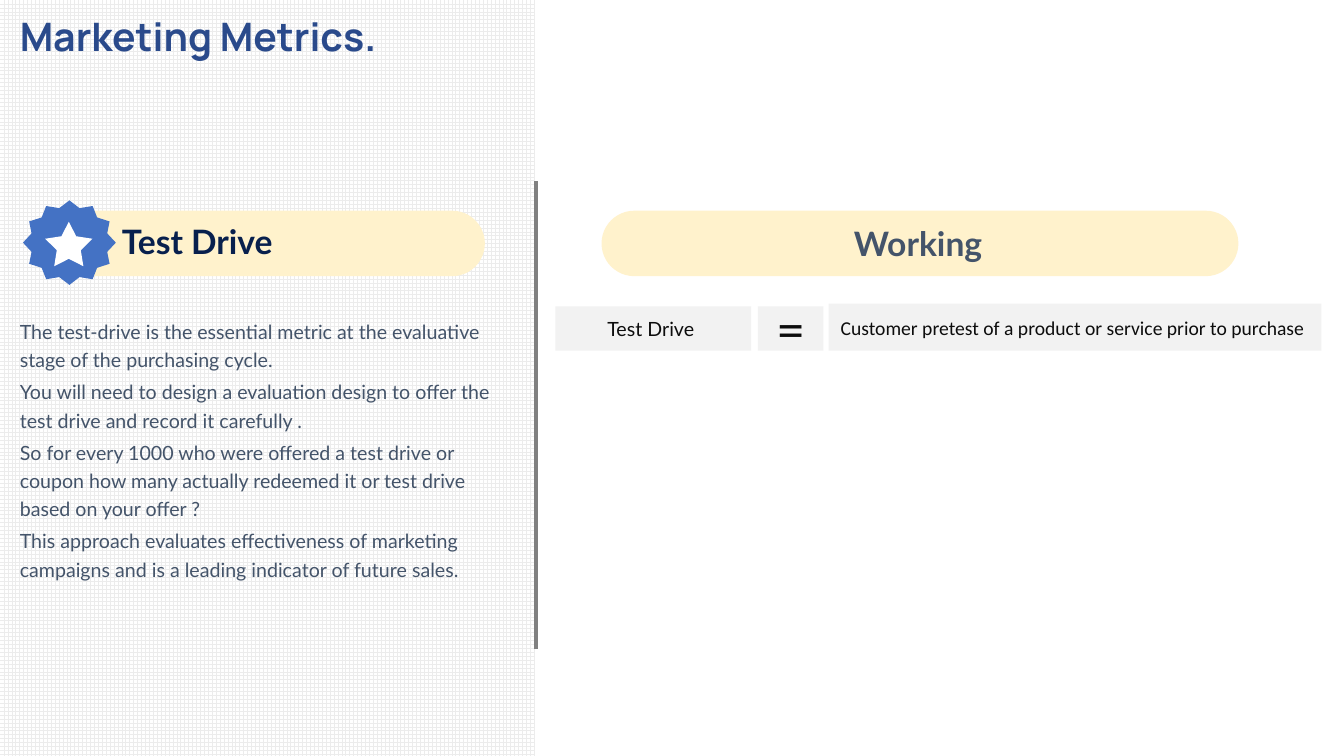
"""Build the Marketing Metrics slide about the test drive."""
import pptx
import pptx.dml.color
import pptx.enum.dml
import pptx.enum.shapes
import pptx.enum.text
import pptx.oxml
import pptx.util

Cm = pptx.util.Cm
Pt = pptx.util.Pt
SHAPES = pptx.enum.shapes.MSO_SHAPE
ALIGN = pptx.enum.text.PP_ALIGN
ANCHOR = pptx.enum.text.MSO_ANCHOR

COLOURS = {
    "white": "FFFFFF",
    "grid": "ECECEC",
    "title": "2A4A8B",
    "slate": "44546A",
    "navy": "08204D",
    "ink": "0D0D0D",
    "cream": "FFF2CC",
    "badge": "4472C4",
    "cell": "F2F2F2",
    "divider": "808080",
}
EXPLANATION = [
    "The test-drive is the essential metric at the evaluative stage of the purchasing cycle.",
    "You will need to design a evaluation design to offer the test drive and record it carefully .",
    "So for every 1000 who were offered a test drive or coupon how many actually redeemed it "
    "or test drive based on your offer ?",
    "This approach evaluates effectiveness of marketing campaigns and is a leading indicator "
    "of future sales.",
]


def colour(name):
    """Return the RGB colour stored under a name."""
    return pptx.dml.color.RGBColor.from_string(COLOURS[name])


def write(frame, *lines, size=14, font="Lato", ink="slate", bold=False, align=ALIGN.LEFT,
          anchor=ANCHOR.TOP, wrap=True, spacing=None, gap=0):
    """Fill a text frame with one formatted paragraph per line."""
    frame.word_wrap = wrap
    frame.vertical_anchor = anchor
    for index, line in enumerate(lines):
        paragraph = frame.paragraphs[0] if index == 0 else frame.add_paragraph()
        paragraph.alignment = align
        if spacing:
            paragraph.line_spacing = spacing
        if index:
            paragraph.space_before = Pt(gap)
        run = paragraph.add_run()
        run.text = line
        run.font.size = Pt(size)
        run.font.name = font
        run.font.bold = bold
        run.font.color.rgb = colour(ink)


def add_label(slide, left, top, width, height, *lines, **text_format):
    """Add a text box with formatted lines."""
    box = slide.shapes.add_textbox(Cm(left), Cm(top), Cm(width), Cm(height))
    write(box.text_frame, *lines, **text_format)


def add_block(slide, kind, left, top, width, height, fill, adjust=None):
    """Add a borderless filled preset shape."""
    block = slide.shapes.add_shape(kind, Cm(left), Cm(top), Cm(width), Cm(height))
    block.shadow.inherit = False
    block.line.fill.background()
    block.fill.solid()
    block.fill.fore_color.rgb = colour(fill)
    if adjust is not None:
        block.adjustments[0] = adjust
    return block


def add_grid_panel(slide, left, top, width, height):
    """Add the panel with a fine grid pattern."""
    panel = add_block(slide, SHAPES.RECTANGLE, left, top, width, height, "white")
    panel.fill.patterned()
    panel.fill.pattern = pptx.enum.dml.MSO_PATTERN.LARGE_GRID
    panel.fill.fore_color.rgb = colour("grid")
    panel.fill.back_color.rgb = colour("white")


def add_divider(slide, left, top, height):
    """Add the vertical rule between the two halves."""
    divider = slide.shapes.add_connector(
        pptx.enum.shapes.MSO_CONNECTOR.STRAIGHT, Cm(left), Cm(top), Cm(left), Cm(top + height))
    divider.line.color.rgb = colour("divider")
    divider.line.width = Pt(3)
    properties = divider._element.spPr
    properties.append(pptx.oxml.parse_xml(
        '<a:effectLst xmlns:a="http://schemas.openxmlformats.org/drawingml/2006/main"/>'))


def add_working_heading(slide, left, top, width, height):
    """Add the pill that heads the right half."""
    add_block(slide, SHAPES.ROUNDED_RECTANGLE, left, top, width, height, "cream", 0.5)
    add_label(slide, left + 0.69, top + 0.18, width - 1.27, 1.27, "Working ",
              size=24, bold=True, align=ALIGN.CENTER, anchor=ANCHOR.BOTTOM)


def add_metric_heading(slide, left, top, width, height):
    """Add the pill with a star badge and the metric name."""
    add_block(slide, SHAPES.ROUNDED_RECTANGLE, left, top, width, height, "cream", 0.5)
    add_block(slide, SHAPES.STAR_12_POINT, left - 0.41, top - 0.26, 2.34, 2.13, "badge", 0.422)
    add_block(slide, SHAPES.STAR_5_POINT, left + 0.15, top + 0.28, 1.19, 1.12, "white", 0.254)
    add_label(slide, left + 1.83, top + 0.13, 4.52, 1.27, "Test Drive",
              size=24, ink="navy", bold=True, anchor=ANCHOR.MIDDLE, wrap=False)


def add_formula(slide, left, top, height):
    """Add the row of cells that defines the metric."""
    cells = [
        (0, 0, 4.93, "Test Drive ", {}),
        (6.88, 0.07, 12.42, "Customer pretest of a product or service prior to purchase ",
         {"font": "Calibri"}),
        (5.1, 0, 1.65, "=", {"size": 36}),
    ]
    for offset, rise, width, text, text_format in cells:
        cell = add_block(slide, SHAPES.RECTANGLE, left + offset, top - rise, width,
                         height + rise, "cell")
        write(cell.text_frame, text, ink="ink", align=ALIGN.CENTER, anchor=ANCHOR.MIDDLE,
              **text_format)


def main():
    """Assemble and save the slide."""
    deck = pptx.Presentation()
    deck.slide_width = Cm(33.87)
    deck.slide_height = Cm(19.05)
    slide = deck.slides.add_slide(deck.slide_layouts[6])
    add_grid_panel(slide, 0, 0, 13.49, 19.05)
    add_label(slide, 0.25, 0.18, 10.72, 1.45, "Marketing Metrics.",
              size=28, font="Manrope", ink="title", bold=True)
    add_label(slide, 0.25, 7.82, 12.55, 8.1, *EXPLANATION, spacing=1.2, gap=2.8)
    add_working_heading(slide, 15.16, 5.31, 16.05, 1.65)
    add_divider(slide, 13.51, 4.57, 11.79)
    add_metric_heading(slide, 0.99, 5.31, 11.23, 1.65)
    add_formula(slide, 14, 7.72, 1.12)
    deck.save("out.pptx")


if __name__ == "__main__":
    main()
